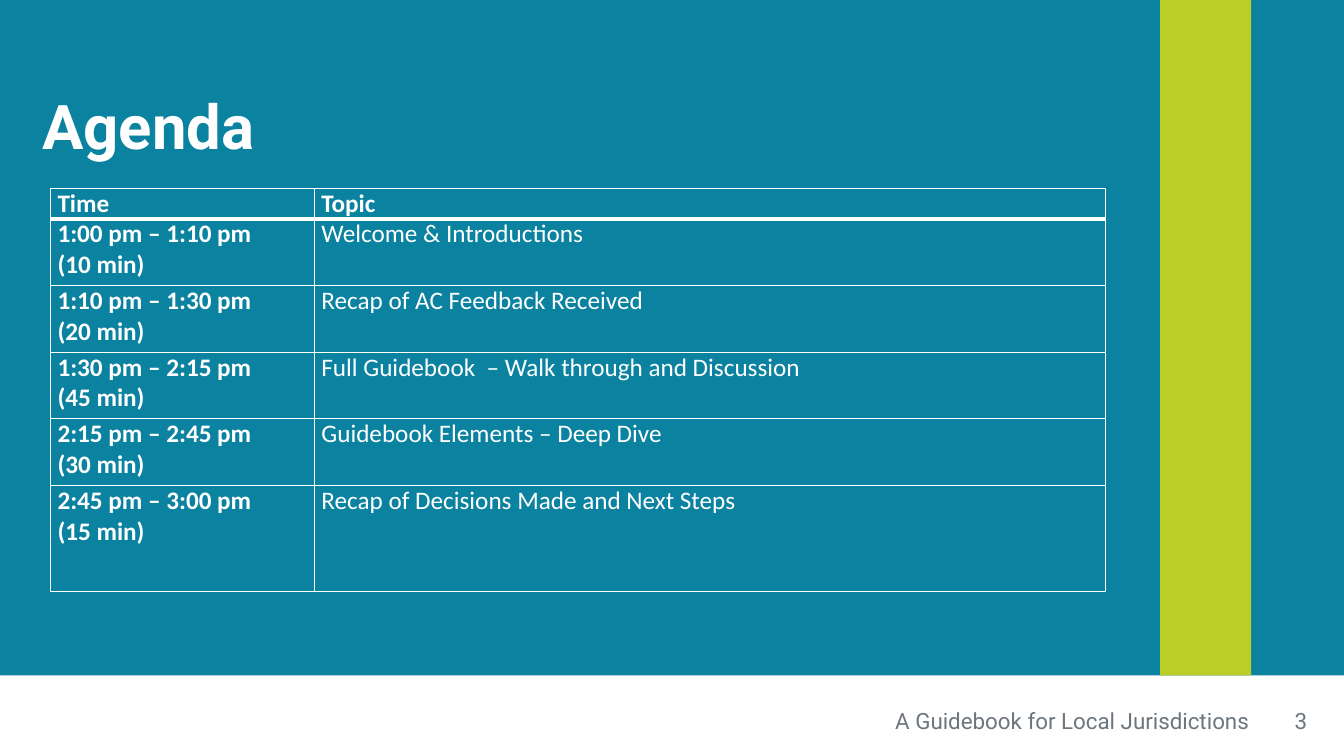
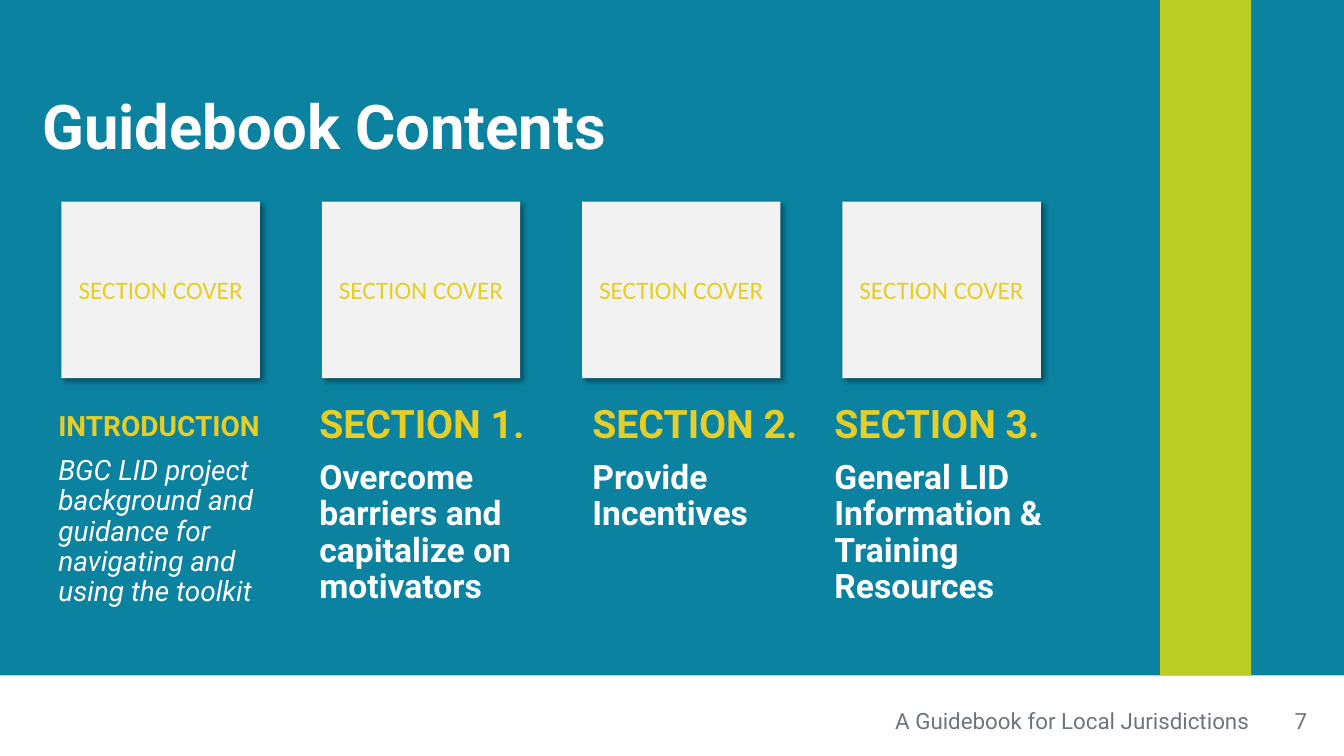
from dataclasses import dataclass
from typing import NamedTuple

from lxml.etree import SubElement
from pptx import Presentation
from pptx.dml.color import RGBColor
from pptx.enum.shapes import MSO_SHAPE as Shape
from pptx.enum.text import MSO_ANCHOR as Anchor, MSO_AUTO_SIZE as AutoSize, PP_ALIGN as Align
from pptx.oxml.ns import qn
from pptx.util import Cm, Pt


@dataclass(frozen=True)
class Theme:
    teal: str = "0A82A0"
    lime: str = "BBCE26"
    yellow: str = "E6CE26"
    white: str = "FFFFFF"
    pale: str = "F2F2F2"
    gray: str = "6E767D"
    black: str = "000000"
    heading_font: str = "Roboto"
    body_font: str = "Calibri"
    title: int = 44
    section: int = 28
    summary: int = 24
    intro: int = 20
    body: int = 18
    footer: int = 16


T = Theme()


class Box(NamedTuple):
    left: float
    top: float
    width: float
    height: float

    def lengths(self) -> list:
        return [Cm(v) for v in self]


class AgendaItem(NamedTuple):
    time: str
    duration: str
    topic: str


class Section(NamedTuple):
    heading: str
    summary: str
    box: Box
    heading_size: int = T.section
    summary_size: int = T.summary
    is_intro: bool = False


SLIDE_W, SLIDE_H, BAND_H = 33.87, 19.05, 17.02
BANDS = [(Box(0, 0, SLIDE_W, BAND_H), T.teal), (Box(29.24, 0, 2.29, BAND_H), T.lime)]
TITLE_BOX = Box(0.81, 2.03, 27.05, 2.46)
FOOTER_BOX = Box(11.23, 17.65, 20.5, 1.02)
NUMBER_BOX = Box(31.72, 17.65, 1.47, 1.02)
FOOTER = "A Guidebook for Local Jurisdictions"

AGENDA_BOX = Box(1.27, 4.75, 26.59, 10.11)
AGENDA_COLS = [6.65, 19.94]
HEADER_H, ROW_H, LAST_ROW_H = 0.56, 1.68, 2.67
AGENDA = [
    AgendaItem("1:00 pm – 1:10 pm", "(10 min)", "Welcome & Introductions"),
    AgendaItem("1:10 pm – 1:30 pm", "(20 min)", "Recap of AC Feedback Received"),
    AgendaItem("1:30 pm – 2:15 pm", "(45 min)", "Full Guidebook  – Walk through and Discussion"),
    AgendaItem("2:15 pm – 2:45 pm", "(30 min)", "Guidebook Elements – Deep Dive"),
    AgendaItem("2:45 pm – 3:00 pm", "(15 min)", "Recap of Decisions Made and Next Steps"),
]

COVER = Box(1.55, 5.08, 5.0, 4.45)
COVER_STEP = 6.56
SECTIONS = [
    Section("INTRODUCTION",
            "BGC LID project background and guidance for navigating and using the toolkit",
            Box(1.22, 10.26, 6.15, 6.3), T.intro, T.intro, is_intro=True),
    Section("SECTION 1.", "Overcome barriers and capitalize on motivators",
            Box(7.8, 10.06, 7.14, 6.3)),
    Section("SECTION 2.", "Provide Incentives", Box(14.68, 10.06, 6.35, 6.3)),
    Section("SECTION 3.", "General LID Information & Training Resources",
            Box(20.78, 10.06, 6.35, 6.3)),
]


def rgb(color: str) -> RGBColor:
    return RGBColor.from_string(color)


def write(p, text: str, size: int, color: str, font: str = T.heading_font,
          bold: bool = False, italic: bool = False, **paragraph_format) -> None:
    for name, value in paragraph_format.items():
        setattr(p, name, value)
    r = p.add_run()
    r.text = text
    r.font.color.rgb = rgb(color)
    formats = {"name": font, "size": Pt(size), "bold": bold, "italic": italic}
    for name, value in formats.items():
        setattr(r.font, name, value)


def add_rect(s, box: Box, color: str):
    sp = s.shapes.add_shape(Shape.RECTANGLE, *box.lengths())
    sp.fill.solid()
    sp.fill.fore_color.rgb = rgb(color)
    sp.line.fill.background()
    sp.shadow.inherit = False
    return sp


def add_textbox(s, box: Box, anchor: Anchor = Anchor.TOP):
    tf = s.shapes.add_textbox(*box.lengths()).text_frame
    tf.word_wrap = True
    tf.vertical_anchor = anchor
    return tf


def add_slide(prs, title: str, number: int):
    """Add a slide with the shared bands, title and footer."""
    s = prs.slides.add_slide(prs.slide_layouts.get_by_name("Title Only"))
    tree = s.shapes.element
    for i, (box, color) in enumerate(BANDS):
        # Bands go behind the title placeholder, after the two group property elements.
        tree.insert(2 + i, add_rect(s, box, color).element)

    sp = s.shapes.title
    for name, value in zip(Box._fields, TITLE_BOX.lengths()):
        setattr(sp, name, value)
    tf = sp.text_frame
    tf.auto_size = AutoSize.NONE
    tf.vertical_anchor = Anchor.MIDDLE
    write(tf.paragraphs[0], title, T.title, T.white, bold=True,
          alignment=Align.LEFT, line_spacing=0.9)

    for box, text in [(FOOTER_BOX, FOOTER), (NUMBER_BOX, str(number))]:
        tf = add_textbox(s, box, Anchor.MIDDLE)
        write(tf.paragraphs[0], text, T.footer, T.gray, alignment=Align.RIGHT)
    return s


def set_borders(cell, top: float, bottom: float) -> None:
    """Draw white cell borders; widths are in points, the sides are always 1."""
    tc_pr = cell._tc.get_or_add_tcPr()
    for tag, width in {"lnL": 1, "lnR": 1, "lnT": top, "lnB": bottom}.items():
        ln = SubElement(tc_pr, qn(f"a:{tag}"), w=str(Pt(width)))
        fill = SubElement(ln, qn("a:solidFill"))
        SubElement(fill, qn("a:srgbClr"), val=T.white)


def fill_cell(cell, lines: list[str], bold: bool, top: float, bottom: float) -> None:
    set_borders(cell, top, bottom)
    cell.fill.background()
    margins = {"margin_left": 0.18, "margin_right": 0.18, "margin_top": 0, "margin_bottom": 0}
    for name, value in margins.items():
        setattr(cell, name, Cm(value))
    tf = cell.text_frame
    for i, line in enumerate(lines):
        p = tf.add_paragraph() if i else tf.paragraphs[0]
        write(p, line, T.body, T.white, T.body_font, bold=bold)


def add_agenda(s) -> None:
    rows = [(["Time"], ["Topic"])] + [([a.time, a.duration], [a.topic]) for a in AGENDA]
    heights = [HEADER_H] + [ROW_H] * (len(AGENDA) - 1) + [LAST_ROW_H]
    table = s.shapes.add_table(len(rows), len(AGENDA_COLS), *AGENDA_BOX.lengths()).table
    table.horz_banding = False
    for column, width in zip(table.columns, AGENDA_COLS):
        column.width = Cm(width)
    for i, (row, height) in enumerate(zip(rows, heights)):
        table.rows[i].height = Cm(height)
        for j, lines in enumerate(row):
            fill_cell(table.cell(i, j), lines, bold=i == 0 or j == 0,
                      top=3 if i == 1 else 1, bottom=3 if i == 0 else 1)


def add_shadow(sp) -> None:
    effects = sp.element.spPr.find(qn("a:effectLst"))
    shadow = SubElement(effects, qn("a:outerShdw"), blurRad=str(Pt(4)), dist=str(Pt(3)),
                        dir="2700000", algn="tl", rotWithShape="0")
    color = SubElement(shadow, qn("a:srgbClr"), val=T.black)
    SubElement(color, qn("a:alpha"), val="40000")


def add_cover(s, index: int) -> None:
    sp = add_rect(s, COVER._replace(left=COVER.left + index * COVER_STEP), T.pale)
    add_shadow(sp)
    tf = sp.text_frame
    tf.word_wrap = True
    tf.vertical_anchor = Anchor.MIDDLE
    write(tf.paragraphs[0], "SECTION COVER", T.body, T.yellow, T.body_font,
          alignment=Align.CENTER)


def add_section(s, section: Section) -> None:
    tf = add_textbox(s, section.box)
    write(tf.paragraphs[0], section.heading, section.heading_size, T.yellow, bold=True,
          line_spacing=0.9)
    write(tf.add_paragraph(), section.summary, section.summary_size, T.white,
          bold=not section.is_intro, italic=section.is_intro,
          line_spacing=0.9, space_before=Pt(10))


def main() -> None:
    prs = Presentation()
    prs.slide_width, prs.slide_height = Cm(SLIDE_W), Cm(SLIDE_H)

    add_agenda(add_slide(prs, "Agenda", 3))

    s = add_slide(prs, "Guidebook Contents", 7)
    for i, section in enumerate(SECTIONS):
        add_cover(s, i)
        add_section(s, section)

    prs.save("out.pptx")


if __name__ == "__main__":
    main()
